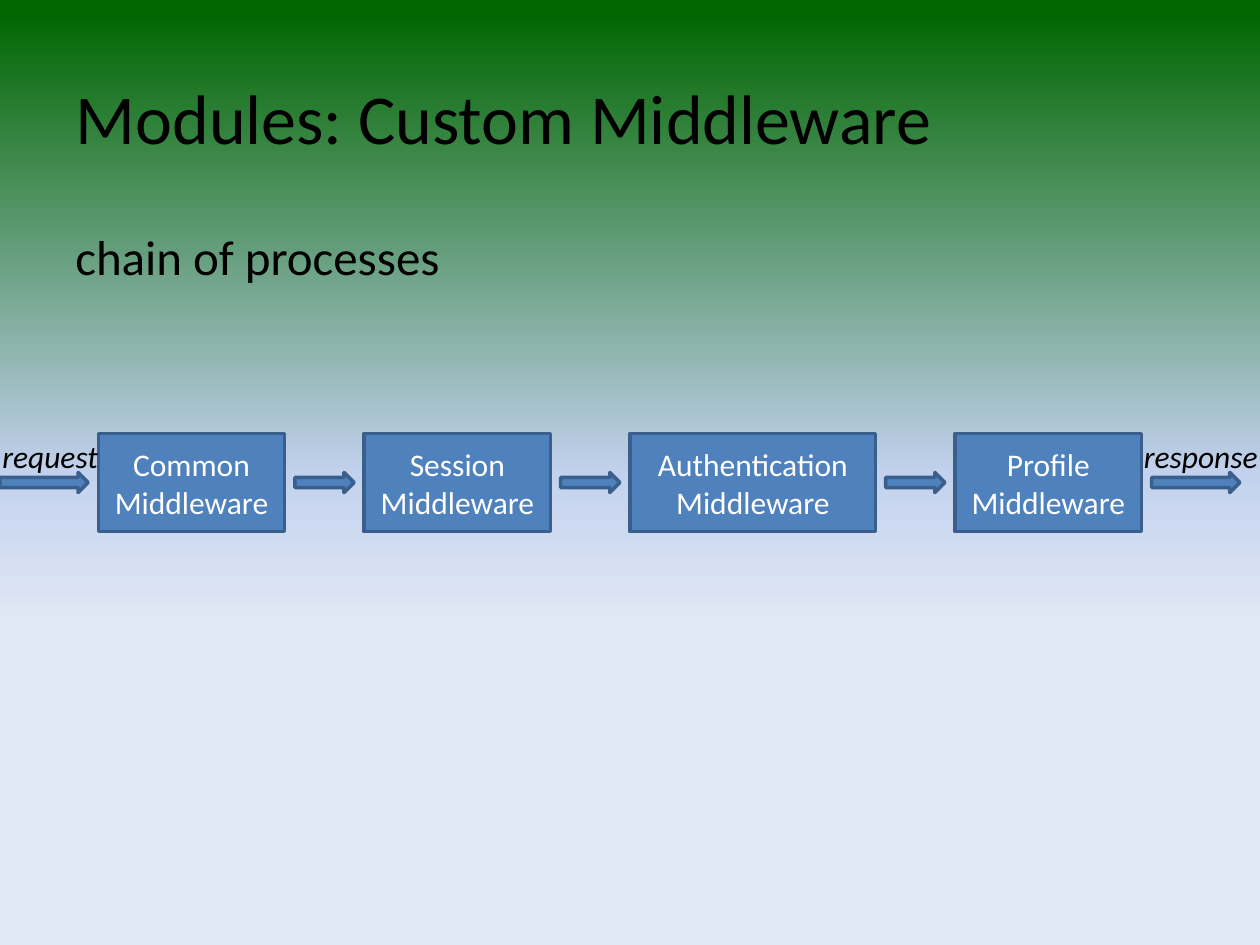
from copy import deepcopy

from pptx import Presentation
from pptx.dml.color import RGBColor
from pptx.enum.shapes import MSO_SHAPE as SHAPE
from pptx.enum.text import MSO_ANCHOR as ANCHOR, MSO_AUTO_SIZE as AUTO_SIZE, PP_ALIGN as ALIGN
from pptx.util import Inches, Pt

BLACK = RGBColor(0x00, 0x00, 0x00)
WHITE = RGBColor(0xFF, 0xFF, 0xFF)
BLUE = RGBColor(0x4F, 0x81, 0xBD)
BLUE_EDGE = RGBColor(0x3A, 0x5F, 0x8C)
GRADIENT = [
    (0.01, RGBColor(0x00, 0x66, 0x00)),
    (0.50, RGBColor(0xC2, 0xD1, 0xED)),
    (0.66, RGBColor(0xE1, 0xE8, 0xF5)),
]

STEPS = [("Common", 1.48), ("Session", 1.48), ("Authentication", 1.95), ("Profile", 1.48)]
ARROW_W, END_ARROW_W, ARROW_H = 0.47, 0.7, 0.16
PAD = 0.08  # space between an arrow and a box


def format_text(tf, size, color, align=ALIGN.LEFT, italic=None):
    for p in tf.paragraphs:
        p.alignment = align
        for r in p.runs:
            r.font.name = "Calibri"
            r.font.size = Pt(size)
            r.font.color.rgb = color
            r.font.italic = italic


def paint_background(s):
    fill = s.background.fill
    fill.gradient()
    fill.gradient_angle = 270
    # A new gradient has two stops; the third is cloned from the last
    last = fill.gradient_stops[1]._gs
    last.addnext(deepcopy(last))
    for stop, (position, color) in zip(fill.gradient_stops, GRADIENT):
        stop.position = position
        stop.color.rgb = color


def add_title(s, text, x, y, w, h):
    sp = s.shapes.title
    sp.left, sp.top, sp.width, sp.height = map(Inches, (x, y, w, h))
    sp.text_frame.text = text
    sp.text_frame.vertical_anchor = ANCHOR.MIDDLE
    format_text(sp.text_frame, 40, BLACK)


def add_text(s, text, x, y, w, h, size, italic=None):
    tf = s.shapes.add_textbox(*map(Inches, (x, y, w, h))).text_frame
    tf.word_wrap = True
    tf.text = text
    format_text(tf, size, BLACK, italic=italic)
    return tf


def add_blue_shape(s, kind, x, y, w, h):
    sp = s.shapes.add_shape(kind, *map(Inches, (x, y, w, h)))
    sp.shadow.inherit = False
    sp.fill.solid()
    sp.fill.fore_color.rgb = BLUE
    sp.line.color.rgb = BLUE_EDGE
    sp.line.width = Pt(2)
    return sp


def add_chain(s, x, y, h):
    """Draw arrow, box, arrow, ... from left to right, starting at x."""
    arrow_y = y + (h - ARROW_H) / 2
    for i, (name, w) in enumerate(STEPS):
        # Arrow into the box
        arrow_w = ARROW_W if i else END_ARROW_W
        add_blue_shape(s, SHAPE.RIGHT_ARROW, x, arrow_y, arrow_w, ARROW_H)
        x += arrow_w + PAD
        # Middleware box
        tf = add_blue_shape(s, SHAPE.RECTANGLE, x, y, w, h).text_frame
        tf.text = f"{name}\nMiddleware"
        tf.vertical_anchor = ANCHOR.MIDDLE
        format_text(tf, 18, WHITE, ALIGN.CENTER)
        x += w + PAD
    # Arrow out of the chain
    add_blue_shape(s, SHAPE.RIGHT_ARROW, x, arrow_y, END_ARROW_W, ARROW_H)

    # Labels over the two end arrows
    for label, label_x, label_w in [("request", -0.08, 1.02), ("response", 8.98, 1.17)]:
        tf = add_text(s, label, label_x, y - 0.02, label_w, 0.4, 18, italic=True)
        tf.word_wrap = False
        tf.auto_size = AUTO_SIZE.SHAPE_TO_FIT_TEXT


def main():
    prs = Presentation()
    prs.slide_width, prs.slide_height = Inches(10), Inches(7.5)
    s = prs.slides.add_slide(prs.slide_layouts[5])

    paint_background(s)
    add_title(s, "Modules: Custom Middleware", 0.5, 0.3, 9, 1.25)
    body = add_text(s, "chain of processes", 0.5, 1.75, 9, 4.95, 28)
    body.paragraphs[0].space_before = Pt(5.6)
    add_chain(s, 0, 3.44, 0.78)

    prs.save("out.pptx")


if __name__ == "__main__":
    main()
